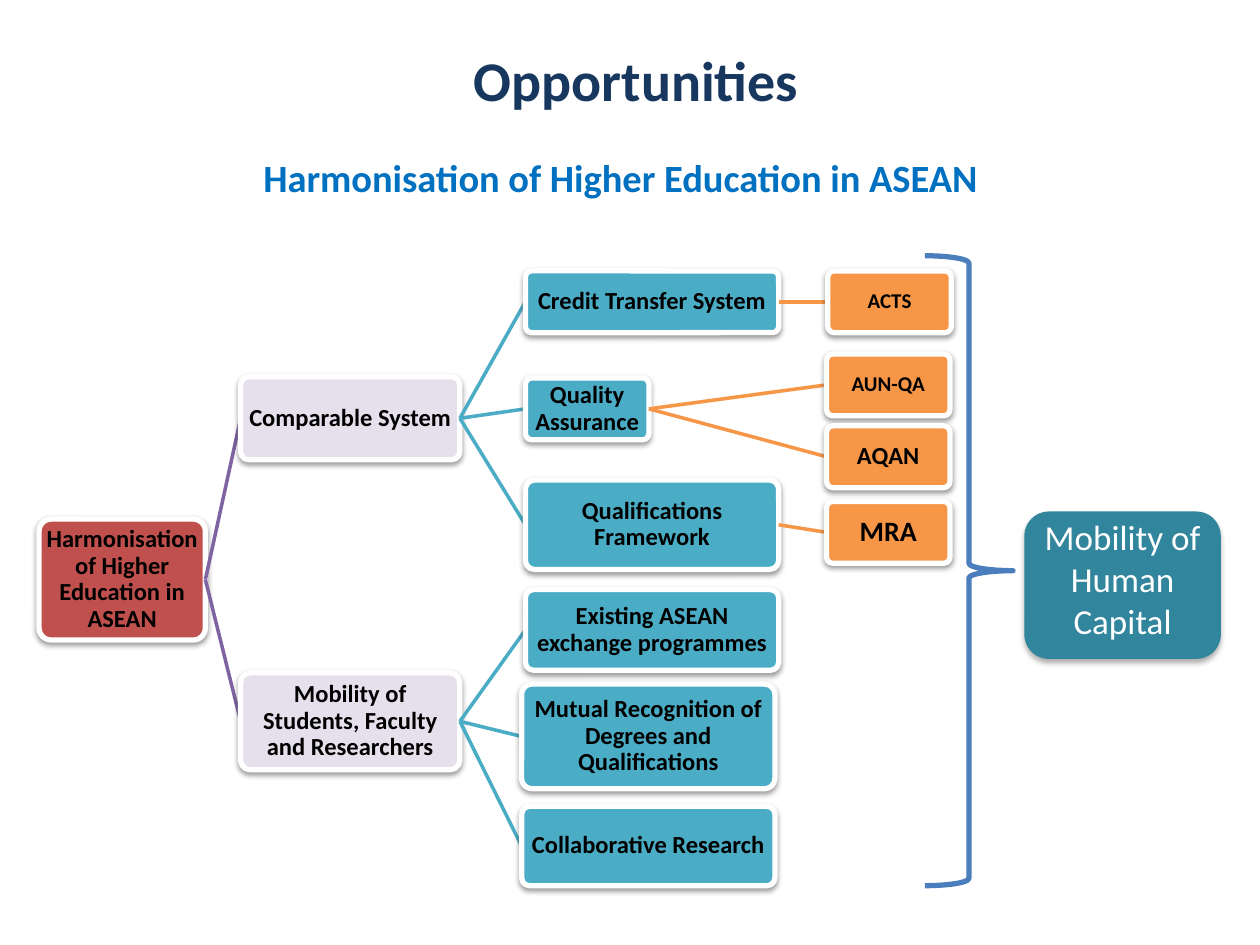
import pptx
import pptx.dml.color
import pptx.enum.shapes
import pptx.enum.text
import pptx.oxml
import pptx.oxml.ns
import pptx.util

RGBColor = pptx.dml.color.RGBColor
Shape = pptx.enum.shapes.MSO_SHAPE
Anchor = pptx.enum.text.MSO_ANCHOR

WHITE = RGBColor(0xFF, 0xFF, 0xFF)
BLACK = RGBColor(0x00, 0x00, 0x00)
NAVY = RGBColor(0x17, 0x37, 0x5E)
BLUE = RGBColor(0x00, 0x70, 0xC0)
BRACE_BLUE = RGBColor(0x4B, 0x7E, 0xBC)
RED = RGBColor(0xC0, 0x50, 0x4D)
PURPLE = RGBColor(0x80, 0x64, 0xA2)
LAVENDER = RGBColor(0xE6, 0xE0, 0xEC)
AQUA = RGBColor(0x4B, 0xAC, 0xC6)
ORANGE = RGBColor(0xF7, 0x96, 0x46)
TEAL = RGBColor(0x31, 0x85, 0x9C)

COLUMNS, ROWS = 100, 75
LEVEL_FILLS = [RED, LAVENDER, AQUA, ORANGE]
LEVEL_LINKS = [None, PURPLE, AQUA, ORANGE]
LEFT_SITE, RIGHT_SITE = 1, 3

TREE = ("Harmonisation of Higher Education in ASEAN", 14, (3.1, 41.2, 13.2, 9.6), [
    ("Comparable System", 14, (19.1, 29.9, 17.4, 6.6), [
        ("Credit Transfer System", 14, (41.7, 21.5, 20.1, 4.9), [
            ("ACTS", 12, (65.7, 21.5, 9.8, 4.9), []),
        ]),
        ("Quality Assurance", 14, (41.7, 30, 9.8, 4.9), [
            ("AUN-QA", 12, (65.6, 28.1, 9.8, 4.9), []),
            ("AQAN", 14, (65.6, 33.8, 9.8, 4.9), []),
        ]),
        ("Qualifications Framework", 14, (41.7, 38.1, 20.1, 7.1), [
            ("MRA", 16, (65.6, 39.8, 9.8, 4.9), []),
        ]),
    ]),
    ("Mobility of Students, Faculty and Researchers", 14, (19.1, 53.4, 17.4, 7.7), [
        ("Existing ASEAN exchange programmes", 14, (41.7, 46.8, 20.1, 6.4), []),
        ("Mutual Recognition of Degrees and Qualifications", 14,
         (41.4, 54.3, 20.1, 8.3), []),
        ("Collaborative Research", 14, (41.4, 64, 20.1, 6.3), []),
    ]),
])


class SlideBuilder:
    font_name = "Calibri"

    def __init__(self, presentation):
        self.column = presentation.slide_width / COLUMNS
        self.row = presentation.slide_height / ROWS
        self.slide = presentation.slides.add_slide(presentation.slide_layouts[0])

    def place(self, area):
        left, top, width, height = area
        return (round(left * self.column), round(top * self.row),
                round(width * self.column), round(height * self.row))

    def set_text(self, shape, text, size, color, bold, anchor=Anchor.MIDDLE, spacing=1.0):
        frame = shape.text_frame
        frame.word_wrap = True
        frame.auto_size = pptx.enum.text.MSO_AUTO_SIZE.NONE
        frame.vertical_anchor = anchor
        paragraph = frame.paragraphs[0]
        paragraph.alignment = pptx.enum.text.PP_ALIGN.CENTER
        paragraph.line_spacing = spacing
        paragraph.space_before = pptx.util.Pt(0)
        run = paragraph.add_run()
        run.text = text
        run.font.name = self.font_name
        run.font.size = pptx.util.Pt(size)
        run.font.bold = bold
        run.font.color.rgb = color

    def heading(self, index, area, text, size, color, anchor):
        shape = self.slide.placeholders[index]
        shape.left, shape.top, shape.width, shape.height = self.place(area)
        self.set_text(shape, text, size, color, True, anchor)

    def add_shadow(self, shape, opacity, blur, distance):
        shape.shadow.inherit = False
        effects = shape._element.spPr.find(pptx.oxml.ns.qn("a:effectLst"))
        effects.append(pptx.oxml.parse_xml(
            f'<a:outerShdw {pptx.oxml.ns.nsdecls("a")} blurRad="{pptx.util.Pt(blur)}" '
            f'dist="{pptx.util.Pt(distance)}" dir="5400000" rotWithShape="0">'
            f'<a:srgbClr val="{BLACK}"><a:alpha val="{opacity * 1000}"/></a:srgbClr>'
            '</a:outerShdw>'))

    def rounded(self, area, fill):
        shape = self.slide.shapes.add_shape(Shape.ROUNDED_RECTANGLE, *self.place(area))
        shape.fill.solid()
        shape.fill.fore_color.rgb = fill
        return shape

    def node(self, area, text, size, fill):
        shape = self.rounded(area, fill)
        shape.adjustments[0] = 0.1
        shape.line.color.rgb = WHITE
        shape.line.width = pptx.util.Pt(3)
        self.add_shadow(shape, 38, 3.1, 1.6)
        frame = shape.text_frame
        frame.margin_left = frame.margin_right = pptx.util.Inches(0.01)
        frame.margin_top = frame.margin_bottom = pptx.util.Inches(0.01)
        self.set_text(shape, text, size, BLACK, True, spacing=0.9)
        return shape

    def link(self, color):
        connector = self.slide.shapes.add_connector(
            pptx.enum.shapes.MSO_CONNECTOR.STRAIGHT, 0, 0, 0, 0)
        connector.line.color.rgb = color
        connector.line.width = pptx.util.Pt(2)
        connector._element.spPr.append(pptx.oxml.parse_xml(
            f'<a:effectLst {pptx.oxml.ns.nsdecls("a")}/>'))
        return connector

    def tree(self, branch, level=0, parent=None):
        text, size, area, children = branch
        connector = self.link(LEVEL_LINKS[level]) if parent else None
        shape = self.node(area, text, size, LEVEL_FILLS[level])
        if connector:
            connector.begin_connect(parent, RIGHT_SITE)
            connector.end_connect(shape, LEFT_SITE)
        for child in children:
            self.tree(child, level + 1, shape)

    def outcome(self, area, text):
        shape = self.rounded(area, TEAL)
        shape.line.fill.background()
        self.add_shadow(shape, 32, 3.5, 2.2)
        shape.text_frame.margin_bottom = pptx.util.Inches(0.15)
        self.set_text(shape, text, 20, WHITE, False)

    def brace(self, area):
        shape = self.slide.shapes.add_shape(Shape.RIGHT_BRACE, *self.place(area))
        shape.shadow.inherit = False
        shape.fill.background()
        shape.line.color.rgb = BRACE_BLUE
        shape.line.width = pptx.util.Pt(3)


def main():
    presentation = pptx.Presentation()
    presentation.slide_width = pptx.util.Inches(10)
    presentation.slide_height = pptx.util.Inches(7.5)
    builder = SlideBuilder(presentation)
    builder.heading(0, (5.5, 3.9, 90, 4.8), "Opportunities", 32, NAVY, Anchor.MIDDLE)
    builder.heading(1, (4.7, 8.6, 89.1, 7.8),
                    "Harmonisation of Higher Education in ASEAN", 22, BLUE, Anchor.BOTTOM)
    builder.tree(TREE)
    builder.outcome((81.3, 40.6, 15.6, 11.7), "Mobility of Human Capital")
    builder.brace((73.4, 20.3, 7, 50))
    presentation.save("out.pptx")


if __name__ == "__main__":
    main()
